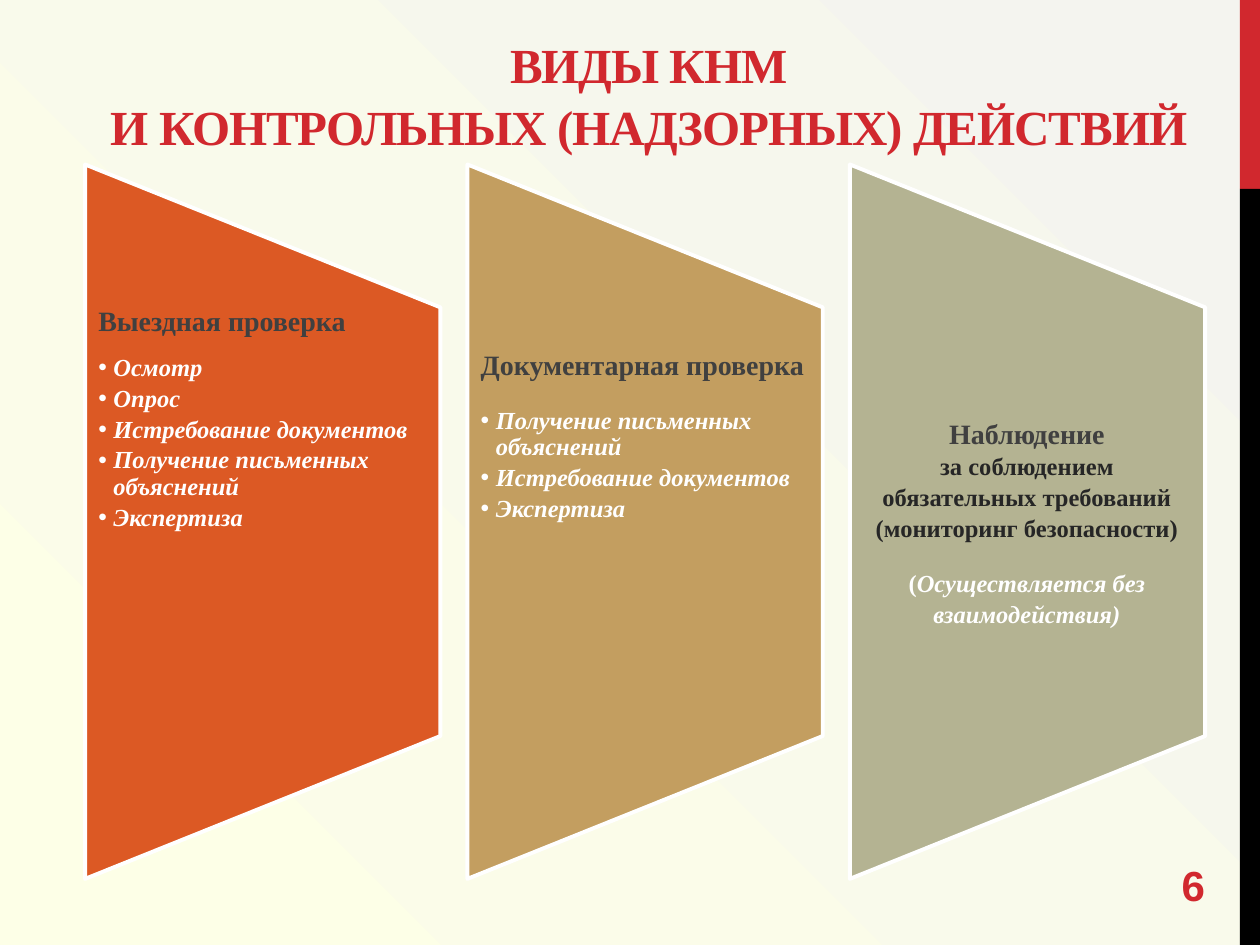
"""Build a slide on kinds of inspection and the actions each one allows."""
import pptx
import pptx.dml.color
import pptx.enum.shapes
import pptx.enum.text
import pptx.util
import lxml.etree

Inches, Pt = pptx.util.Inches, pptx.util.Pt
Kind = pptx.enum.shapes.MSO_SHAPE
Align = pptx.enum.text.PP_ALIGN
Anchor = pptx.enum.text.MSO_ANCHOR
SERIF = "Times New Roman"


def tint(code):
    """Turn a hex string into a colour."""
    return pptx.dml.color.RGBColor.from_string(code)


def style(para, size, color, italic=False, name=SERIF):
    """Set the bold font of a whole paragraph."""
    font = para.font
    font.name, font.size, font.bold, font.italic = name, Pt(size), True, italic
    font.color.rgb = tint(color)


deck = pptx.Presentation()
deck.slide_width, deck.slide_height = Inches(10), Inches(7.5)
slide = deck.slides.add_slide(deck.slide_layouts[3])
shapes = slide.shapes

fill = slide.background.fill
fill.gradient()
fill.gradient_angle = 45
for stop, color in zip(fill.gradient_stops, ("FDFFE7", "F4F4EF")):
    stop.color.rgb = tint(color)

for top, height, color in ((0, 1.5, "D1282E"), (1.5, 6, "000000")):
    bar = shapes.add_shape(Kind.RECTANGLE, Inches(9.84), Inches(top), Inches(0.16), Inches(height))
    bar.shadow.inherit = False
    bar.fill.solid()
    bar.fill.fore_color.rgb = tint(color)
    bar.line.fill.background()

title = shapes.title
title.left, title.top, title.width, title.height = Inches(0.5), Inches(0.17), Inches(9.3), Inches(1.14)
frame = title.text_frame
frame.text = "ВИДЫ КНМ\vИ КОНТРОЛЬНЫХ (НАДЗОРНЫХ) ДЕЙСТВИЙ"
frame.auto_size = pptx.enum.text.MSO_AUTO_SIZE.NONE
frame.vertical_anchor = Anchor.MIDDLE
para = frame.paragraphs[0]
para.alignment, para.line_spacing = Align.CENTER, 1.05
style(para, 28, "D1282E")
for run in para.runs:
    run._r.get_or_add_rPr().set("spc", "-60")

step = 3.035
for col, color in enumerate(("DC5924", "C39E60", "B4B392")):
    panel = shapes.add_shape(Kind.FLOWCHART_MANUAL_OPERATION, Inches(-0.75 + col * step),
                             Inches(2.73), Inches(5.67), Inches(2.82))
    panel.rotation = 270
    panel.shadow.inherit = False
    panel.fill.solid()
    panel.fill.fore_color.rgb = tint(color)
    panel.line.color.rgb = tint("FFFFFF")
    panel.line.width = Pt(2.25)

lists = (
    (2.44, 10, "Выездная проверка",
     ("Осмотр", "Опрос", "Истребование документов", "Получение письменных объяснений", "Экспертиза")),
    (2.79, 15, "Документарная проверка",
     ("Получение письменных объяснений", "Истребование документов", "Экспертиза")),
)
for col, (top, gap, head, items) in enumerate(lists):
    body = slide.placeholders[col + 1]
    shapes.element.append(body.element)
    body.left, body.top = Inches(0.67 + col * step), Inches(top)
    body.width, body.height = Inches(2.82), Inches(5.84 - top)
    frame = body.text_frame
    frame.text = "\n".join((head, *items))
    frame.auto_size = pptx.enum.text.MSO_AUTO_SIZE.NONE
    frame.margin_left = frame.margin_right = Inches(0.11)
    frame.margin_top = frame.margin_bottom = 0
    for row, para in enumerate(frame.paragraphs):
        props = para._p.get_or_add_pPr()
        hang = Inches(0.12) if row else 0
        props.set("marL", str(hang))
        props.set("indent", str(-hang))
        mark = lxml.etree.SubElement(props, pptx.oxml.ns.qn("a:buChar" if row else "a:buNone"))
        if row:
            mark.set("char", "•")
        para.line_spacing, para.space_before = 0.9, Pt(0)
        para.space_after = Pt(2.5 if row else gap)
        style(para, 14 if row else 16, "FFFFFF" if row else "404040", bool(row))

note = shapes.add_textbox(Inches(6.74), Inches(2.44), Inches(2.82), Inches(3.4))
frame = note.text_frame
frame.word_wrap = True
frame.vertical_anchor = Anchor.MIDDLE
frame.margin_left = frame.margin_right = Inches(0.11)
frame.margin_top = frame.margin_bottom = 0
frame.text = "Наблюдение\nза соблюдением обязательных требований (мониторинг безопасности)\n("
for para, size, color in zip(frame.paragraphs, (16, 14, 14), ("404040", "262626", "FFFFFF")):
    para.alignment, para.line_spacing = Align.CENTER, 1.05
    style(para, size, color)
para.space_before = Pt(14)
run = para.add_run()
run.text = "Осуществляется без взаимодействия)"
run.font.italic = True

page = shapes.add_textbox(Inches(9.28), Inches(6.82), Inches(1.44), Inches(0.4))
frame = page.text_frame
frame.word_wrap = True
frame.vertical_anchor = Anchor.MIDDLE
frame.text = "6"
style(frame.paragraphs[0], 24, "D1282E", name="Arial")

deck.save("out.pptx")
